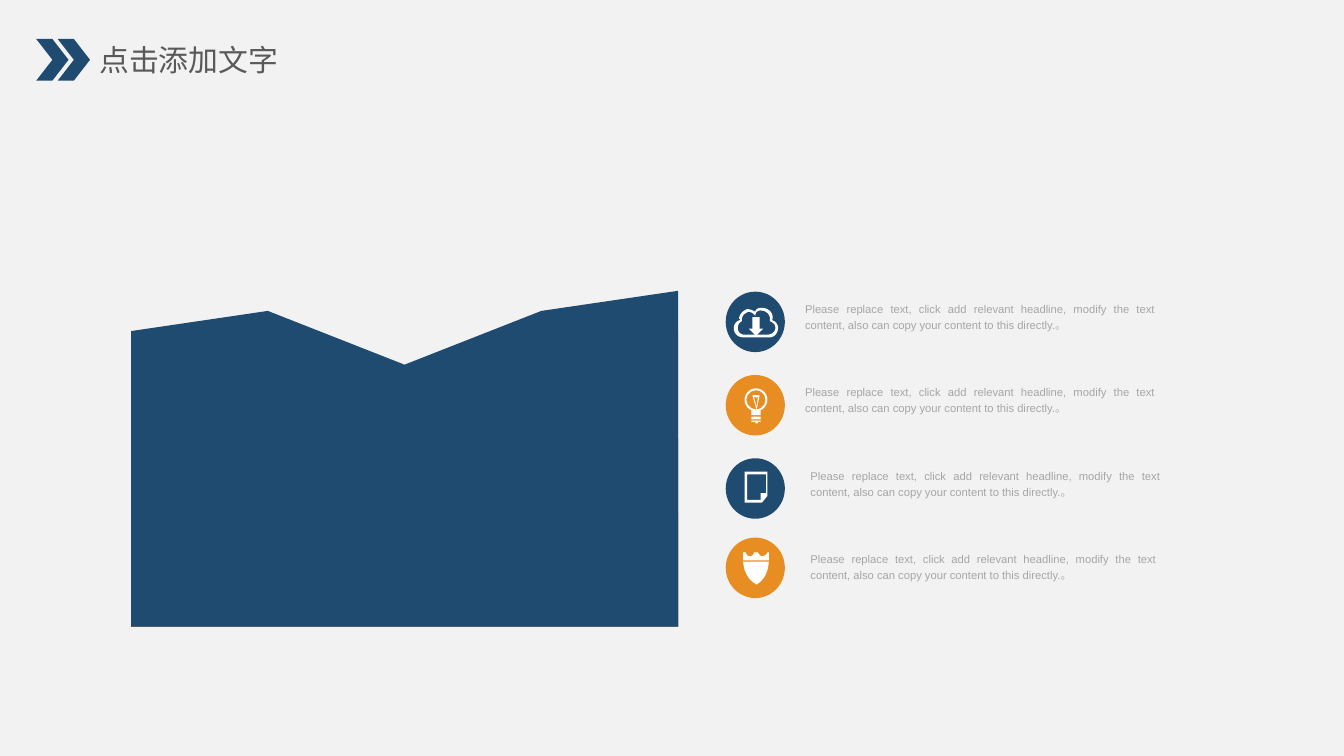
from lxml import etree
from pptx import Presentation
from pptx.chart import data
from pptx.dml.color import RGBColor
from pptx.enum import chart as charts, shapes, text
from pptx.oxml.ns import qn
from pptx.util import Inches, Pt

# Theme
THEME = dict(
    paper="F2F2F2", navy="1F4B70", orange="E88D22", white="FFFFFF",
    heading="595959", caption="A6A6A6",
    heading_font="Noto Sans CJK SC", font="Arial",
    heading_size=16, caption_size=6, chart_size=18,
)

# Content
HEADING = "点击添加文字"
CAPTION = ("Please replace text, click add relevant headline, modify the text "
           "content, also can copy your content to this directly.。")
CATEGORIES = ["1", "2", "3", "4", "5"]
SERIES = [
    ("Series 1", (88, 94, 78, 94, 100), "navy"),
    ("Series 2", (69, 56, 62, 66, 88), "orange"),
    ("Series 3", (47, 47, 47, 59, 56), "navy"),
    ("Series 4", (62, 38, 38, 28, 34), "orange"),
]
# Badge top, badge colour, caption left, caption top, caption width
ROWS = [
    (2.17, "navy", 5.95, 2.21, 2.68),
    (2.79, "orange", 5.95, 2.83, 2.68),
    (3.41, "navy", 5.99, 3.45, 2.68),
    (4.0, "orange", 5.99, 4.07, 2.65),
]

# Icon outlines: a pair is a corner, six numbers are a cubic curve
CLOUD = [
    [(5.74, 2.38), (5.75, 2.38, 5.75, 2.37, 5.75, 2.36),
     (5.75, 2.32, 5.71, 2.29, 5.67, 2.29), (5.62, 2.29, 5.62, 2.32, 5.62, 2.32),
     (5.62, 2.32, 5.59, 2.3, 5.56, 2.3), (5.53, 2.31, 5.5, 2.34, 5.5, 2.37),
     (5.51, 2.38), (5.48, 2.39, 5.46, 2.41, 5.46, 2.44),
     (5.46, 2.48, 5.49, 2.51, 5.53, 2.51), (5.73, 2.51),
     (5.76, 2.51, 5.79, 2.48, 5.79, 2.44), (5.79, 2.41, 5.77, 2.39, 5.74, 2.38)],
    [(5.71, 2.49), (5.54, 2.49), (5.51, 2.49, 5.49, 2.47, 5.49, 2.44),
     (5.49, 2.42, 5.5, 2.4, 5.52, 2.39), (5.52, 2.38),
     (5.52, 2.35, 5.54, 2.33, 5.57, 2.32), (5.6, 2.32, 5.62, 2.35, 5.62, 2.35),
     (5.62, 2.35, 5.62, 2.31, 5.66, 2.31), (5.7, 2.31, 5.73, 2.34, 5.73, 2.37),
     (5.73, 2.39), (5.75, 2.4, 5.77, 2.41, 5.77, 2.44),
     (5.77, 2.47, 5.74, 2.49, 5.71, 2.49)],
]
PAGE = [
    [(5.54, 3.51), (5.54, 3.74), (5.67, 3.74), (5.71, 3.69), (5.71, 3.51)],
    [(5.56, 3.72), (5.56, 3.53), (5.7, 3.53), (5.7, 3.67), (5.66, 3.67), (5.66, 3.72)],
]
BULB_CAP = [[(5.59, 3.14), (5.62, 3.14), (5.62, 3.15), (5.64, 3.15),
             (5.64, 3.14), (5.66, 3.14), (5.66, 3.13), (5.59, 3.13)]]
FILAMENT = [
    [(5.65, 2.94), (5.6, 2.94), (5.6, 2.95), (5.63, 3.05), (5.65, 2.95)],
    [(5.63, 3.03), (5.61, 2.95), (5.63, 2.96), (5.64, 2.95)],
]
SHIELD = [[(5.63, 4.35), (5.72, 4.3, 5.72, 4.18, 5.72, 4.18), (5.53, 4.18),
           (5.53, 4.18, 5.53, 4.3, 5.63, 4.35)]]
CROWN = [[(5.71, 4.11), (5.71, 4.12, 5.69, 4.14, 5.67, 4.14),
          (5.66, 4.14, 5.64, 4.12, 5.64, 4.11), (5.61, 4.11),
          (5.61, 4.12, 5.6, 4.14, 5.58, 4.14), (5.56, 4.14, 5.55, 4.12, 5.55, 4.11),
          (5.53, 4.11), (5.53, 4.17), (5.72, 4.17), (5.72, 4.11)]]
OUTLINES = [CLOUD, PAGE, BULB_CAP, FILAMENT, SHIELD, CROWN]
KIND = shapes.MSO_SHAPE
ICON_PARTS = [
    (KIND.DOWN_ARROW, (5.57, 2.36, 0.11, 0.14)),
    (KIND.DONUT, (5.54, 2.89, 0.17, 0.17)),
    (KIND.RECTANGLE, (5.59, 3.05, 0.07, 0.04)),
    (KIND.RECTANGLE, (5.59, 3.1, 0.07, 0.02)),
]


def color(name):
    return RGBColor.from_string(THEME[name])


def box(*lengths):
    return [Inches(length) for length in lengths]


def paint(shape, fill):
    shape.shadow.inherit = False
    shape.fill.solid()
    shape.fill.fore_color.rgb = color(fill)
    shape.line.fill.background()
    return shape


def add_part(slide, kind, place, fill):
    return paint(slide.shapes.add_shape(kind, *box(*place)), fill)


def flatten(contour, steps=8):
    points = [contour[0]]
    for segment in contour[1:]:
        if len(segment) == 2:
            points.append(segment)
            continue
        start, controls = points[-1], (segment[:2], segment[2:4], segment[4:])
        for step in range(1, steps + 1):
            t = step / steps
            weights = ((1 - t) ** 3, 3 * t * (1 - t) ** 2, 3 * t * t * (1 - t), t ** 3)
            points.append(tuple(
                sum(w * p[axis] for w, p in zip(weights, (start, *controls)))
                for axis in (0, 1)))
    return [(Inches(x), Inches(y)) for x, y in points]


def add_outline(slide, contours):
    first, *holes = [flatten(contour) for contour in contours]
    builder = slide.shapes.build_freeform(*first[0], scale=1.0)
    builder.add_line_segments(first[1:], close=True)
    for hole in holes:
        builder.move_to(*hole[0])
        builder.add_line_segments(hole[1:], close=True)
    paint(builder.convert_to_shape(), "white")


def write(shape, words, style, font, align, insets):
    frame = shape.text_frame
    frame.word_wrap = True
    frame.auto_size = text.MSO_AUTO_SIZE.NONE
    frame.vertical_anchor = text.MSO_ANCHOR.TOP
    frame.margin_left = frame.margin_right = Inches(insets[0])
    frame.margin_top = frame.margin_bottom = Inches(insets[1])
    frame.text = words
    paragraph = frame.paragraphs[0]
    paragraph.alignment = align
    paragraph.font.name = font
    paragraph.font.size = Pt(THEME[style + "_size"])
    paragraph.font.color.rgb = color(style)
    return paragraph


def add_heading(slide):
    heading = slide.shapes.title
    heading.left, heading.top, heading.width, heading.height = box(0.67, 0.27, 1.96, 0.34)
    paragraph = write(heading, HEADING, "heading", THEME["heading_font"],
                      text.PP_ALIGN.LEFT, (0.07, 0.04))
    # East Asian typeface for the Chinese heading
    run = paragraph.runs[0]
    run.font.name = THEME["heading_font"]
    east_asian = etree.Element(qn("a:ea"), typeface=THEME["heading_font"])
    run._r.rPr.find(qn("a:latin")).addnext(east_asian)
    for left in (0.27, 0.43):
        add_part(slide, KIND.CHEVRON, (left, 0.29, 0.24, 0.31), "navy")


def add_area_chart(slide):
    figures = data.CategoryChartData()
    figures.categories = CATEGORIES
    for name, values, _ in SERIES:
        figures.add_series(name, values)
    chart = slide.shapes.add_chart(
        charts.XL_CHART_TYPE.AREA, *box(0.89, 1.87, 4.24, 2.85), figures).chart
    chart.has_legend = chart.has_title = False
    chart.font.name = THEME["font"]
    chart.font.size = Pt(THEME["chart_size"])
    chart.font.color.rgb = RGBColor(0, 0, 0)
    chart.plots[0].vary_by_categories = False
    for axis in (chart.category_axis, chart.value_axis):
        axis.has_major_gridlines = False
        axis.visible = False
    chart.value_axis.minimum_scale, chart.value_axis.maximum_scale = 0, 109.5
    for series, (_, _, fill) in zip(chart.plots[0].series, SERIES):
        series.format.fill.solid()
        series.format.fill.fore_color.rgb = color(fill)


def add_rows(slide):
    for badge_top, fill, left, top, width in ROWS:
        add_part(slide, KIND.OVAL, (5.4, badge_top, 0.44, 0.45), fill)
        caption = slide.shapes.add_textbox(*box(left, top, width, 0.28))
        write(caption, CAPTION, "caption", THEME["font"],
              text.PP_ALIGN.JUSTIFY, (0.04, 0.02)).line_spacing = 1.2
    for contours in OUTLINES:
        add_outline(slide, contours)
    for kind, place in ICON_PARTS:
        part = add_part(slide, kind, place, "white")
        if kind == KIND.DONUT:
            part.adjustments[0] = 0.08


def main():
    deck = Presentation()
    # Widescreen, 16 to 9
    deck.slide_width = Inches(10)
    deck.slide_height = deck.slide_width * 9 // 16
    slide = deck.slides.add_slide(deck.slide_layouts[5])
    slide.background.fill.solid()
    slide.background.fill.fore_color.rgb = color("paper")
    add_heading(slide)
    add_area_chart(slide)
    add_rows(slide)
    deck.save("out.pptx")


if __name__ == "__main__":
    main()
